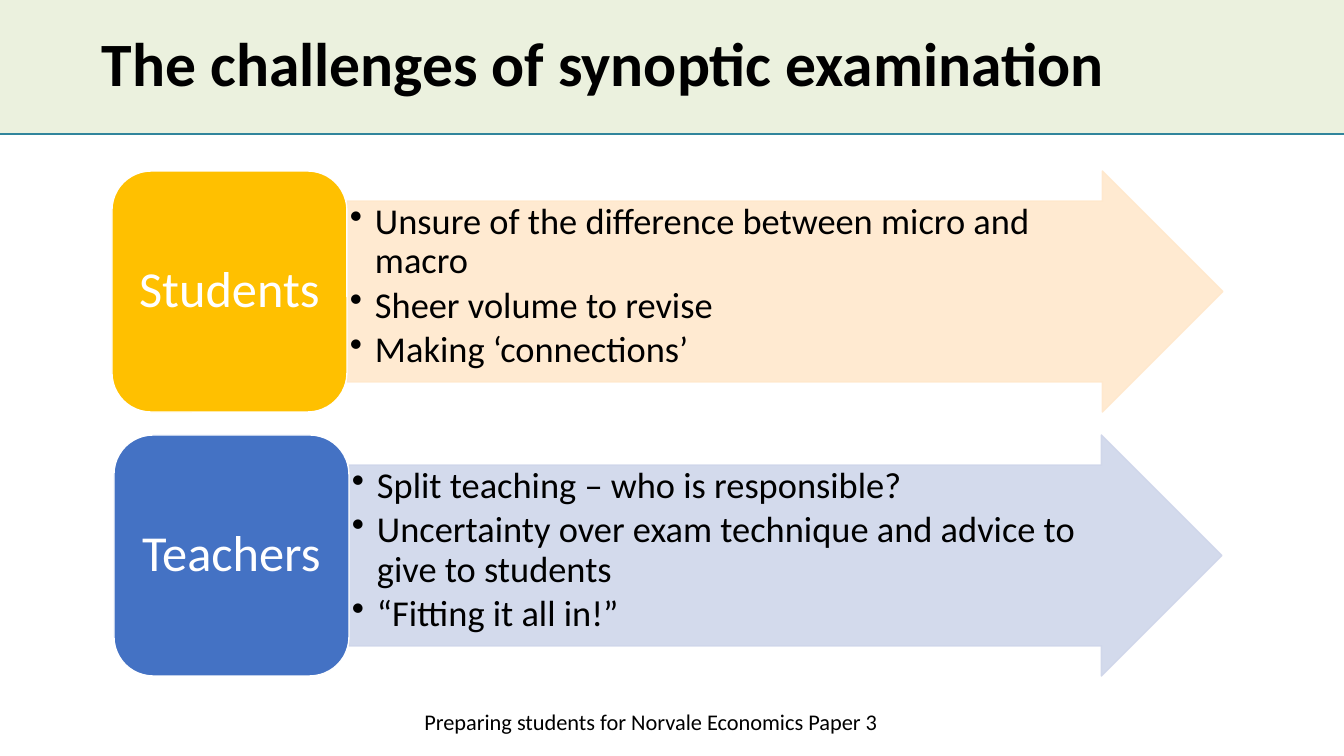
from lxml.etree import SubElement
from pptx import Presentation
from pptx.dml.color import RGBColor
from pptx.enum.shapes import MSO_CONNECTOR, MSO_SHAPE
from pptx.enum.text import MSO_ANCHOR, PP_ALIGN
from pptx.oxml.ns import qn
from pptx.util import Emu, Pt

SCALE = 12192000 / 1344
COLORS = {
    "black": "000000", "white": "FFFFFF", "band": "EBF1DE", "rule": "31859C",
    "gold": "FFC000", "peach": "FFE8CC", "blue": "4472C4", "pale": "CFD6EA",
}


def px(*nums):
    """Turn px lengths into EMU."""
    return [Emu(round(n * SCALE)) for n in nums]


def write(shape, *lines, size, color="black", bold=False, align=PP_ALIGN.LEFT,
          anchor=MSO_ANCHOR.MIDDLE, inset=(10, 5), bullet=False, space=1.0, after=0):
    frame = shape.text_frame
    frame.word_wrap = True
    frame.vertical_anchor = anchor
    frame.margin_left, frame.margin_top = px(*inset)
    frame.margin_right, frame.margin_bottom = px(*inset)
    for i, line in enumerate(lines):
        para = frame.paragraphs[0] if i == 0 else frame.add_paragraph()
        para.text = line
        para.alignment = align
        para.line_spacing = space
        para.space_after = Pt(after)
        if bullet:
            props = para._p.get_or_add_pPr()
            hang = px(25)[0]
            props.set("marL", str(hang))
            props.set("indent", str(-hang))
            SubElement(props, qn("a:buChar"), char="•")
        font = para.runs[0].font
        font.name = "Calibri"
        font.size = Pt(size)
        font.bold = bold
        font.color.rgb = RGBColor.from_string(COLORS[color])


deck = Presentation()
deck.slide_width, deck.slide_height = px(1344, 756)
slide = deck.slides.add_slide(deck.slide_layouts[6])
shapes = slide.shapes

# Heading band, rule, title and footer
band = shapes.add_shape(MSO_SHAPE.RECTANGLE, *px(0, 0, 1344, 134))
band.shadow.inherit = False
band.fill.solid()
band.fill.fore_color.rgb = RGBColor.from_string(COLORS["band"])
band.line.fill.background()

rule = shapes.add_connector(MSO_CONNECTOR.STRAIGHT, *px(0, 134, 1344, 134))
rule.line.color.rgb = RGBColor.from_string(COLORS["rule"])
rule.line.width = Pt(1.75)
SubElement(rule._element.spPr, qn("a:effectLst"))

title = shapes.add_textbox(*px(92, 10, 1159, 113))
write(title, "The challenges of synoptic examination", size=44, bold=True, space=0.9)

footer = shapes.add_textbox(*px(404, 702, 494, 39))
write(footer, "Preparing students for Norvale Economics Paper 3", size=16,
      align=PP_ALIGN.CENTER)

# One row per group: label box, arrow and bullet points
HIGH, WIDE, TOP, STEP = 241, 235, 171, 264
groups = [
    ("Students", 112, 876, "gold", "peach", [
        "Unsure of the difference between micro and macro",
        "Sheer volume to revise",
        "Making ‘connections’"]),
    ("Teachers", 114, 873, "blue", "pale", [
        "Split teaching – who is responsible?",
        "Uncertainty over exam technique and advice to give to students",
        "“Fitting it all in!”"]),
]
for row, (name, left, length, dark, light, points) in enumerate(groups):
    top = TOP + row * STEP
    start = left + WIDE
    arrow = shapes.add_shape(MSO_SHAPE.RIGHT_ARROW, *px(start, top, length, HIGH))
    arrow.adjustments[0], arrow.adjustments[1] = 0.75, 0.5
    label = shapes.add_shape(MSO_SHAPE.ROUNDED_RECTANGLE, *px(left, top, WIDE, HIGH))
    for shape, fill, edge in ((arrow, light, light), (label, dark, "white")):
        shape.shadow.inherit = False
        shape.fill.solid()
        shape.fill.fore_color.rgb = RGBColor.from_string(COLORS[fill])
        shape.line.color.rgb = RGBColor.from_string(COLORS[edge])
        shape.line.width = Pt(1)
    for tint in arrow._element.spPr.iter(qn("a:srgbClr")):
        SubElement(tint, qn("a:alpha"), val="90000")

    write(label, name, size=36, color="white", align=PP_ALIGN.CENTER,
          inset=(15, 7), space=0.9)
    body = shapes.add_textbox(*px(start + 1, top + 30, length - 91, 181))
    write(body, *points, size=26, anchor=MSO_ANCHOR.TOP, inset=(2, 2),
          bullet=True, space=0.9, after=3.6)

deck.save("out.pptx")
